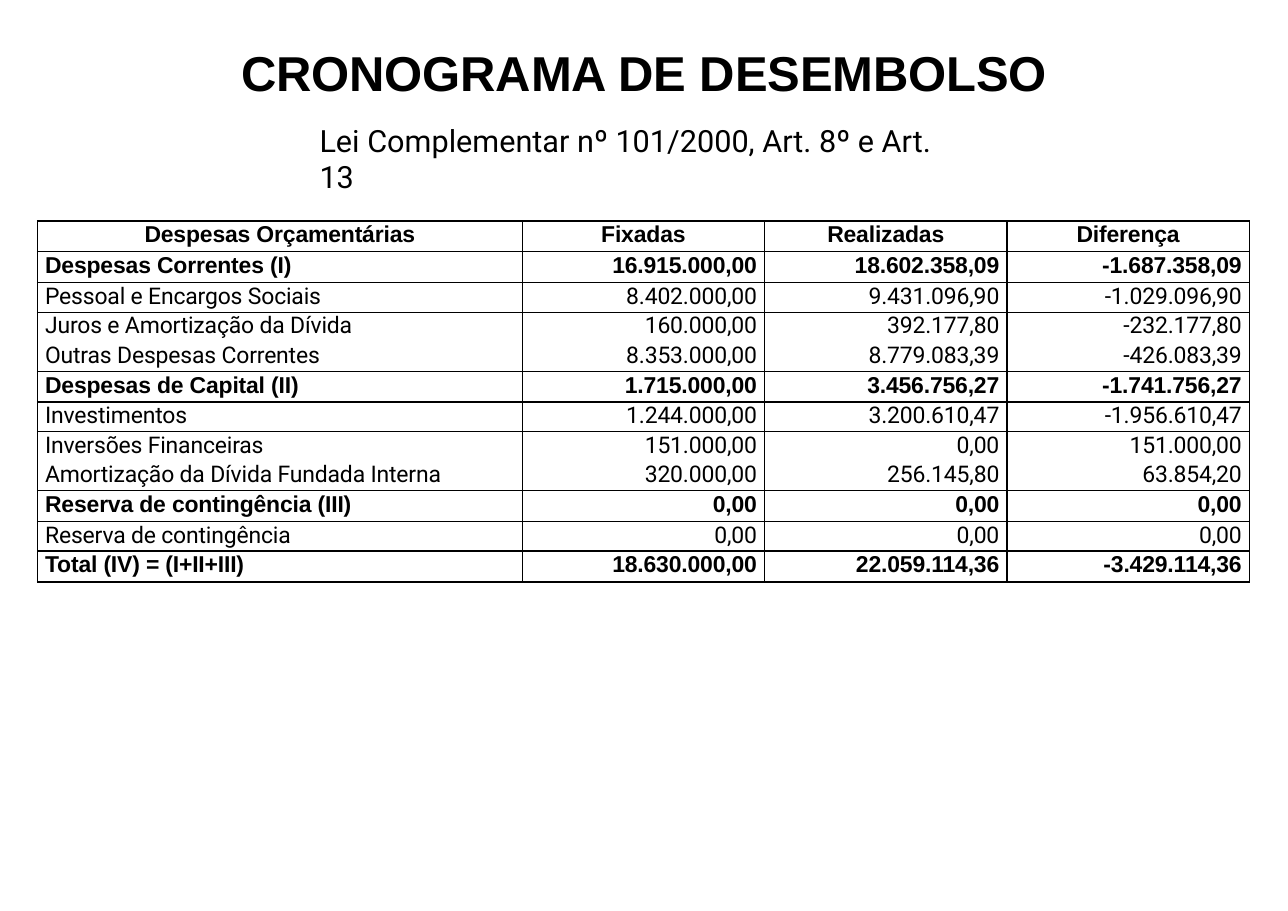
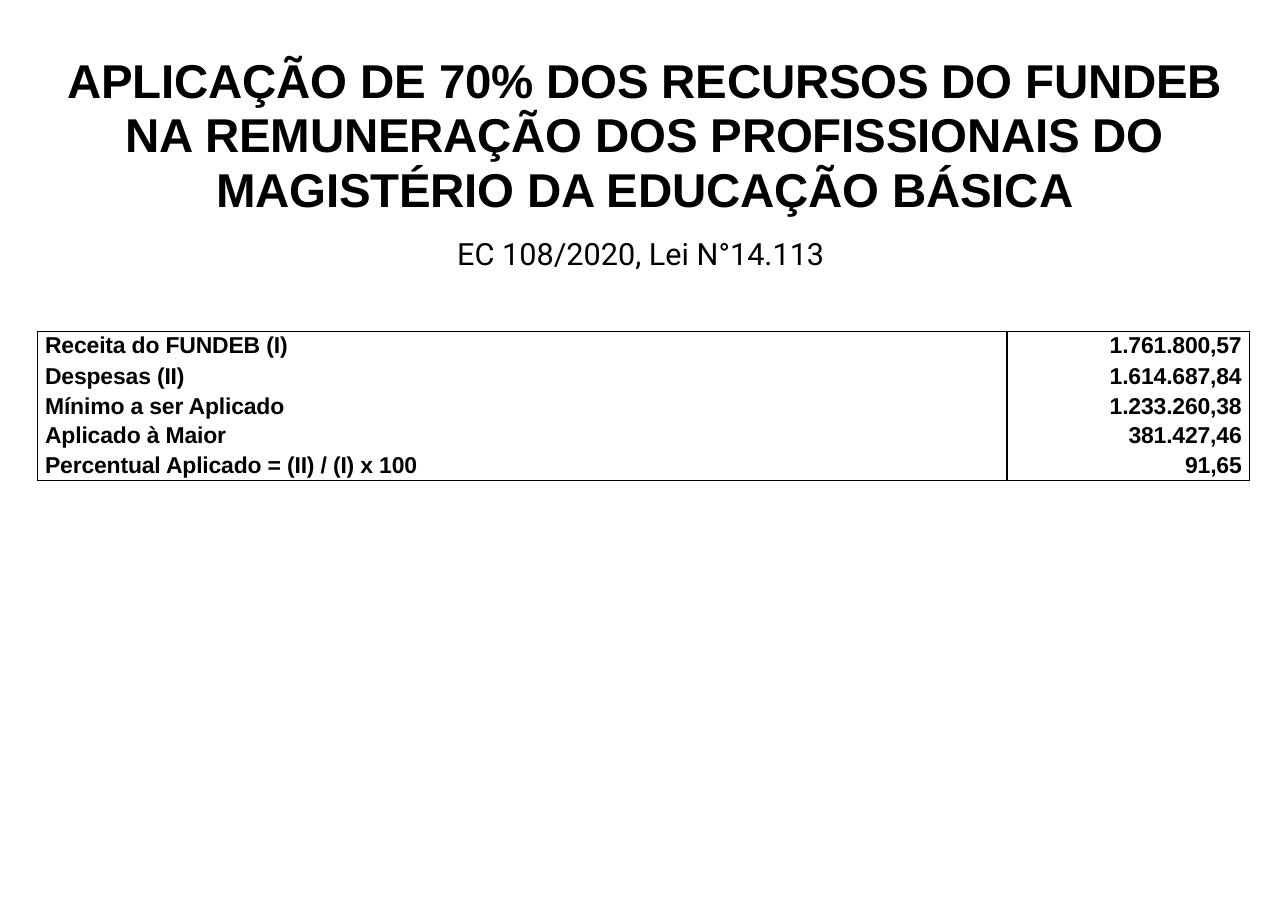
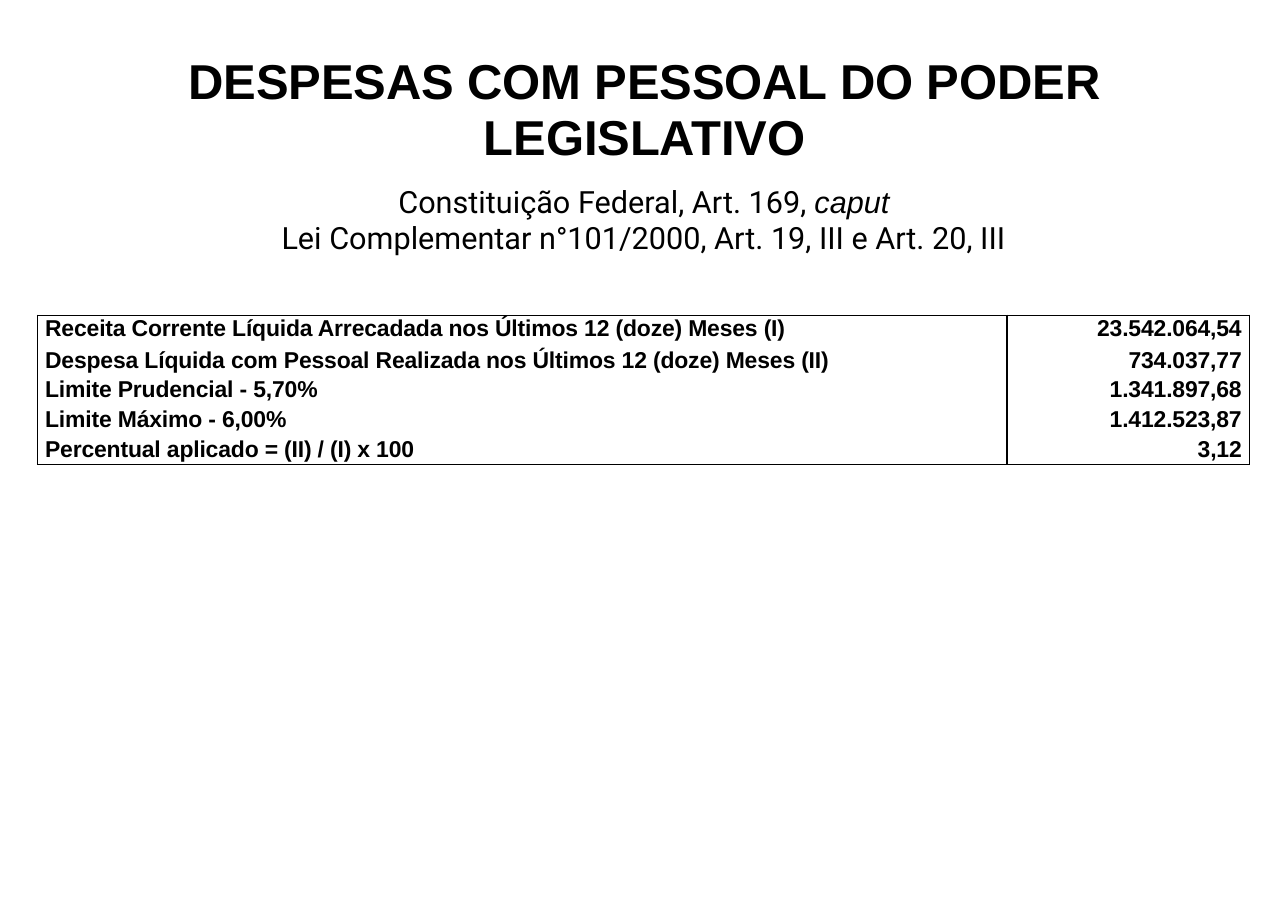
from dataclasses import dataclass
from typing import NamedTuple, Optional

from lxml import etree
from pptx import Presentation
from pptx import util as u
from pptx.dml import color
from pptx.enum import text
from pptx.oxml import ns

# Shared look
COLORS = {"ink": "000000", "paper": "FFFFFF"}
FORMATS = {
    "title": {"name": "Arial", "bold": True},
    "subtitle": {"name": "Roboto", "size": u.Pt(20), "bold": False},
    "emphasis": {"name": "Arial", "size": u.Pt(20), "italic": True},
    "strong": {"name": "Arial", "size": u.Pt(15), "bold": True},
    "plain": {"name": "Roboto", "size": u.Pt(15), "bold": False},
}
TIGHT = {"title", "strong", "plain"}
LEFT, CENTER, RIGHT = (text.PP_ALIGN.LEFT, text.PP_ALIGN.CENTER, text.PP_ALIGN.RIGHT)
PAGE_WIDTH, PAGE_HEIGHT = 841.68, 595.44
TITLE_ONLY = 5
TABLE_LEFT = 24.5
VALUE_WIDTH = 158.4
TABLE_WIDTH = 5 * VALUE_WIDTH
TALL_ROW, ROW = 20.1, 19.35
CELL_PADDING = 5
RULE_WIDTH = 1
NO_TABLE_STYLE = "{2D5ABB26-0587-4C30-8999-92F81FD0307C}"


class Box(NamedTuple):
    left: float
    top: float
    width: float
    height: float


class Span(NamedTuple):
    text: str
    style: str = "subtitle"


class Row(NamedTuple):
    cells: tuple[str, ...]
    style: str = "plain"
    tall: bool = False
    rule_below: bool = True
    header: bool = False


@dataclass
class TextBlock:
    box: Box
    paragraphs: list[list[Span]]
    align: text.PP_ALIGN = CENTER
    size: Optional[float] = None
    line: Optional[float] = None
    before: float = 1
    inset: float = 0.9


@dataclass
class Page:
    title: TextBlock
    subtitle: TextBlock
    table_top: float
    rows: list[Row]


def heading(*cells: str, header: bool = False) -> Row:
    return Row(cells, "strong", tall=True, header=header)


def boxed_rows(*pairs: tuple[str, str]) -> list[Row]:
    """Bold rows with a rule only around the whole table."""
    last = len(pairs) - 1
    return [Row(pair, "strong", index == 0, index == last) for index, pair in enumerate(pairs)]


# Content
PAGES = [
    Page(
        TextBlock(Box(154.8, 26.64, 532.08, 40.32),
                  [[Span("CRONOGRAMA DE DESEMBOLSO", "title")]], size=32),
        TextBlock(Box(208.8, 78.5, 425.5, 26),
                  [[Span("Lei Complementar nº 101/2000, Art. 8º e Art. 13")]], LEFT),
        144.5,
        [
            heading("Despesas Orçamentárias", "Fixadas", "Realizadas", "Diferença", header=True),
            heading("Despesas Correntes (I)", "16.915.000,00", "18.602.358,09", "-1.687.358,09"),
            Row(("Pessoal e Encargos Sociais", "8.402.000,00", "9.431.096,90", "-1.029.096,90")),
            Row(("Juros e Amortização da Dívida", "160.000,00", "392.177,80", "-232.177,80"),
                rule_below=False),
            Row(("Outras Despesas Correntes", "8.353.000,00", "8.779.083,39", "-426.083,39")),
            heading("Despesas de Capital (II)", "1.715.000,00", "3.456.756,27", "-1.741.756,27"),
            Row(("Investimentos", "1.244.000,00", "3.200.610,47", "-1.956.610,47")),
            Row(("Inversões Financeiras", "151.000,00", "0,00", "151.000,00"), rule_below=False),
            Row(("Amortização da Dívida Fundada Interna", "320.000,00", "256.145,80", "63.854,20")),
            heading("Reserva de contingência (III)", "0,00", "0,00", "0,00"),
            Row(("Reserva de contingência", "0,00", "0,00", "0,00")),
            heading("Total (IV) = (I+II+III)", "18.630.000,00", "22.059.114,36", "-3.429.114,36"),
        ],
    ),
    Page(
        TextBlock(Box(40.3, 31, 761.8, 110.2),
                  [[Span("APLICAÇÃO DE 70% DOS RECURSOS DO FUNDEB NA REMUNERAÇÃO DOS "
                         "PROFISSIONAIS DO MAGISTÉRIO DA EDUCAÇÃO BÁSICA", "title")]],
                  size=31, line=35.7, before=3.4, inset=3.6),
        TextBlock(Box(298.8, 152.6, 245.5, 26), [[Span("EC 108/2020, Lei N°14.113")]], LEFT),
        216.7,
        boxed_rows(
            ("Receita do FUNDEB (I)", "1.761.800,57"),
            ("Despesas (II)", "1.614.687,84"),
            ("Mínimo a ser Aplicado", "1.233.260,38"),
            ("Aplicado à Maior", "381.427,46"),
            ("Percentual Aplicado = (II) / (I) x 100", "91,65"),
        ),
    ),
    Page(
        TextBlock(Box(29.5, 31, 783.4, 77),
                  [[Span("DESPESAS COM PESSOAL DO PODER LEGISLATIVO", "title")]],
                  size=32, line=36.8, before=3.6, inset=3.6),
        TextBlock(Box(180.7, 119.5, 480.2, 49),
                  [[Span("Constituição Federal, Art. 169, "), Span("caput", "emphasis")],
                   [Span("Lei Complementar n°101/2000, Art. 19, III e Art. 20, III")]],
                  line=23.4),
        206,
        boxed_rows(
            ("Receita Corrente Líquida Arrecadada nos Últimos 12 (doze) Meses (I)", "23.542.064,54"),
            ("Despesa Líquida com Pessoal Realizada nos Últimos 12 (doze) Meses (II)", "734.037,77"),
            ("Limite Prudencial - 5,70%", "1.341.897,68"),
            ("Limite Máximo - 6,00%", "1.412.523,87"),
            ("Percentual aplicado = (II) / (I) x 100", "3,12"),
        ),
    ),
]


# Text
def add_span(paragraph, span: Span, size: Optional[float] = None) -> None:
    run = paragraph.add_run()
    run.text = span.text
    for name, value in FORMATS[span.style].items():
        setattr(run.font, name, value)
    if size:
        run.font.size = u.Pt(size)
    run.font.color.rgb = color.RGBColor.from_string(COLORS["ink"])
    if span.style in TIGHT:
        run.font._element.set("spc", "-10")


def fill_text(shape, block: TextBlock) -> None:
    for name, value in zip(Box._fields, block.box):
        setattr(shape, name, u.Pt(value))
    frame = shape.text_frame
    frame_format = {
        "word_wrap": True,
        "auto_size": text.MSO_AUTO_SIZE.SHAPE_TO_FIT_TEXT,
        "vertical_anchor": text.MSO_ANCHOR.TOP,
        "margin_left": 0, "margin_right": 0, "margin_bottom": 0,
        "margin_top": u.Pt(block.inset),
    }
    for name, value in frame_format.items():
        setattr(frame, name, value)
    for index, spans in enumerate(block.paragraphs):
        paragraph = frame.add_paragraph() if index else frame.paragraphs[0]
        paragraph.alignment = block.align
        paragraph.space_before = u.Pt(0 if index else block.before)
        if block.line:
            paragraph.line_spacing = u.Pt(block.line)
        for span in spans:
            add_span(paragraph, span, block.size)


# Table
def set_borders(cell, above: bool, below: bool) -> None:
    properties = cell._tc.get_or_add_tcPr()
    for side, ruled in {"L": True, "R": True, "T": above, "B": below}.items():
        line = etree.SubElement(properties, ns.qn(f"a:ln{side}"), w=str(u.Pt(RULE_WIDTH)))
        if ruled:
            fill = etree.SubElement(line, ns.qn("a:solidFill"))
            etree.SubElement(fill, ns.qn("a:srgbClr"), val=COLORS["ink"])
        else:
            etree.SubElement(line, ns.qn("a:noFill"))


def fill_cell(cell, content: str, row: Row, align: text.PP_ALIGN) -> None:
    cell_format = {
        "margin_left": u.Pt(CELL_PADDING),
        "margin_right": u.Pt(CELL_PADDING),
        "margin_top": u.Pt(0.7 if row.tall else 0),
        "margin_bottom": 0,
        "vertical_anchor": text.MSO_ANCHOR.TOP,
    }
    for name, value in cell_format.items():
        setattr(cell, name, value)
    paragraph = cell.text_frame.paragraphs[0]
    paragraph.alignment = align
    if row.tall:
        paragraph.space_before = u.Pt(0.6)
    else:
        paragraph.line_spacing = u.Pt(17.8)
    add_span(paragraph, Span(content, row.style))


def add_budget_table(slide, top: float, rows: list[Row]) -> None:
    heights = [TALL_ROW if row.tall else ROW for row in rows]
    value_columns = len(rows[0].cells) - 1
    widths = [TABLE_WIDTH - value_columns * VALUE_WIDTH] + [VALUE_WIDTH] * value_columns
    box = Box(TABLE_LEFT, top, TABLE_WIDTH, sum(heights))
    table = slide.shapes.add_table(len(rows), len(widths), *map(u.Pt, box)).table
    table.first_row = table.horz_banding = False
    table._tbl.tblPr.find(ns.qn("a:tableStyleId")).text = NO_TABLE_STYLE
    for column, width in zip(table.columns, widths):
        column.width = u.Pt(width)
    rule_above = True
    for row_index, row in enumerate(rows):
        table.rows[row_index].height = u.Pt(heights[row_index])
        for column_index, content in enumerate(row.cells):
            cell = table.cell(row_index, column_index)
            align = CENTER if row.header else RIGHT if column_index else LEFT
            fill_cell(cell, content, row, align)
            set_borders(cell, rule_above, row.rule_below)
            cell.fill.background()
        rule_above = row.rule_below


# Slides
def add_page(presentation, page: Page) -> None:
    slide = presentation.slides.add_slide(presentation.slide_layouts[TITLE_ONLY])
    background = slide.background.fill
    background.solid()
    background.fore_color.rgb = color.RGBColor.from_string(COLORS["paper"])
    fill_text(slide.shapes.title, page.title)
    subtitle = slide.shapes.add_textbox(*map(u.Pt, page.subtitle.box))
    fill_text(subtitle, page.subtitle)
    add_budget_table(slide, page.table_top, page.rows)


def main() -> None:
    presentation = Presentation()
    presentation.slide_width = u.Pt(PAGE_WIDTH)
    presentation.slide_height = u.Pt(PAGE_HEIGHT)
    for page in PAGES:
        add_page(presentation, page)
    presentation.save("out.pptx")


if __name__ == "__main__":
    main()
